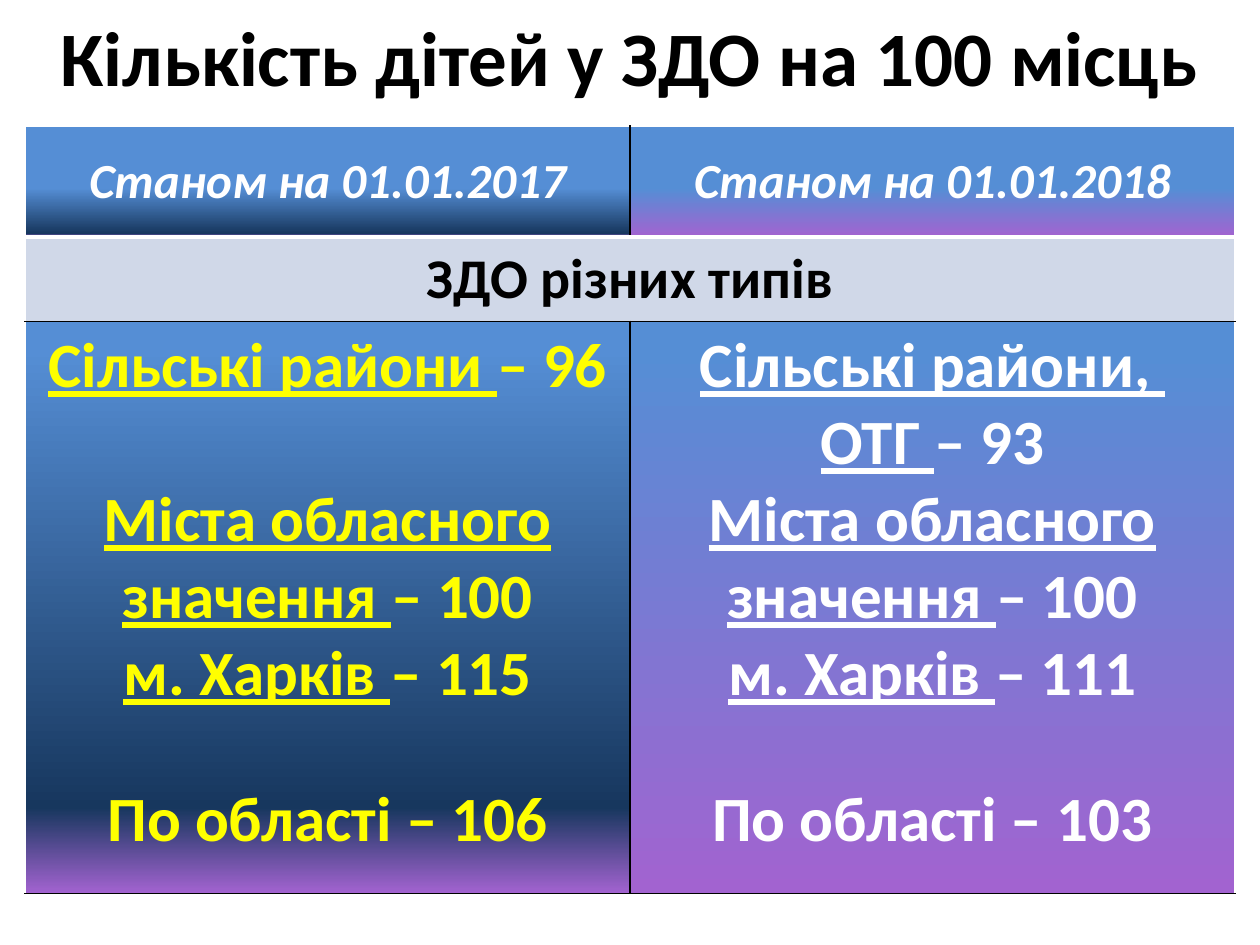
from lxml import etree
from pptx import Presentation
from pptx.dml.color import RGBColor
from pptx.enum.text import MSO_ANCHOR, PP_ALIGN
from pptx.oxml.ns import qn
from pptx.util import Inches, Pt

CENTER = PP_ALIGN.CENTER
MIDDLE, TOP = MSO_ANCHOR.MIDDLE, MSO_ANCHOR.TOP
HUES = {"white": "FFFFFF", "black": "000000", "yellow": "FFFF00",
        "blue": "558ED5", "navy": "17375E", "purple": "A263D0",
        "pale": "D0D8E8"}
WHITE, BLACK = ("white", 1), ("black", 1)
THICK = ("white", 3)
GAP = 44  # one body line, in points
GAP_LOW = 39  # one slightly smaller line

# Each body paragraph: underlined label, value, space before
LEFT = [("Сільські райони ", "– 96", 0),
        ("Міста обласного значення ", "– 100", GAP),
        ("м. Харків ", "– 115", 0),
        ("", "По області – 106", GAP_LOW)]
RIGHT = [("Сільські райони, ", "", 0),
         ("ОТГ ", "– 93", 0),
         ("Міста обласного значення ", "– 100", 0),
         ("м. Харків ", "– 111", 0),
         ("", "По області – 103", GAP_LOW)]


def add_run(para, text, hue, **form):
    run = para.add_run()
    run.text = text
    for key, val in {"name": "Calibri", "bold": True, **form}.items():
        setattr(run.font, key, val)
    run.font.color.rgb = RGBColor.from_string(HUES[hue])


def add_fill(parent, hue):
    fill = etree.SubElement(parent, qn("a:solidFill"))
    etree.SubElement(fill, qn("a:srgbClr"), val=HUES[hue])


def paint(cell, stops, edges):
    """Set the borders (left, right, top, bottom), then the fill."""
    props = cell._tc.get_or_add_tcPr()
    for side, (hue, width) in zip("LRTB", edges):
        line = etree.SubElement(props, qn("a:ln" + side), w=str(Pt(width)))
        add_fill(line, hue)
    if isinstance(stops, str):
        add_fill(props, stops)
        return
    grad = etree.SubElement(props, qn("a:gradFill"), rotWithShape="1")
    group = etree.SubElement(grad, qn("a:gsLst"))
    for pos, hue in stops:
        stop = etree.SubElement(group, qn("a:gs"), pos=str(pos * 1000))
        etree.SubElement(stop, qn("a:srgbClr"), val=HUES[hue])
    etree.SubElement(grad, qn("a:lin"), ang="5400000", scaled="0")


def add_title(slide, box):
    frame = slide.shapes.add_textbox(*box).text_frame
    frame.word_wrap = True
    frame.vertical_anchor = MIDDLE
    para = frame.paragraphs[0]
    para.alignment = CENTER
    add_run(para, "Кількість дітей у ЗДО на 100 місць", "black", size=Pt(44))


def fill_head(cell, text, hue, **form):
    cell.vertical_anchor = MIDDLE
    para = cell.text_frame.paragraphs[0]
    para.alignment = CENTER
    add_run(para, text, hue, **form)


def fill_body(cell, items, hue):
    cell.vertical_anchor = TOP
    frame = cell.text_frame
    for num, (label, value, gap) in enumerate(items):
        para = frame.add_paragraph() if num else frame.paragraphs[0]
        para.alignment = CENTER
        if gap:
            para.space_before = Pt(gap)
        if label:
            add_run(para, label, hue, size=Pt(36), underline=True)
        if value:
            add_run(para, value, hue, size=Pt(36))


def add_grid(slide, box):
    table = slide.shapes.add_table(3, 2, *box).table
    table.first_row = table.horz_banding = False
    for row, high in zip(table.rows, (0.88, 0.67, 4.54)):
        row.height = Inches(high)

    # Date headings and body, one column at a time
    cols = [("2017", LEFT, "yellow", [(97, "navy")], [(85, "navy")]),
            ("2018", RIGHT, "white", [], [])]
    sides = [(WHITE, BLACK), (BLACK, WHITE)]
    for col, (year, items, hue, head_mid, body_mid) in enumerate(cols):
        head, body = table.cell(0, col), table.cell(2, col)
        fill_head(head, "Станом на 01.01." + year, "white",
                  size=Pt(28), italic=True)
        fill_body(body, items, hue)
        for cell, flat, mid, ends in (
                (head, 56, head_mid, (WHITE, THICK)),
                (body, 5, body_mid, (BLACK, BLACK))):
            stops = [(0, "blue"), (flat, "blue"), *mid, (100, "purple")]
            paint(cell, stops, sides[col] + ends)

    # Band across both columns
    band = table.cell(1, 0)
    band.merge(table.cell(1, 1))
    fill_head(band, "ЗДО різних типів", "black", size=Pt(32))
    for col in range(2):
        paint(table.cell(1, col), "pale", (WHITE, WHITE, THICK, BLACK))


def main():
    deck = Presentation()
    deck.slide_width, deck.slide_height = Inches(10), Inches(7.5)
    slide = deck.slides.add_slide(deck.slide_layouts[6])
    left, width = Inches(0.2), Inches(9.6)
    add_title(slide, (left, Inches(0.13), width, Inches(0.62)))
    add_grid(slide, (left, Inches(1), width, Inches(6.09)))
    deck.save("out.pptx")


if __name__ == "__main__":
    main()
